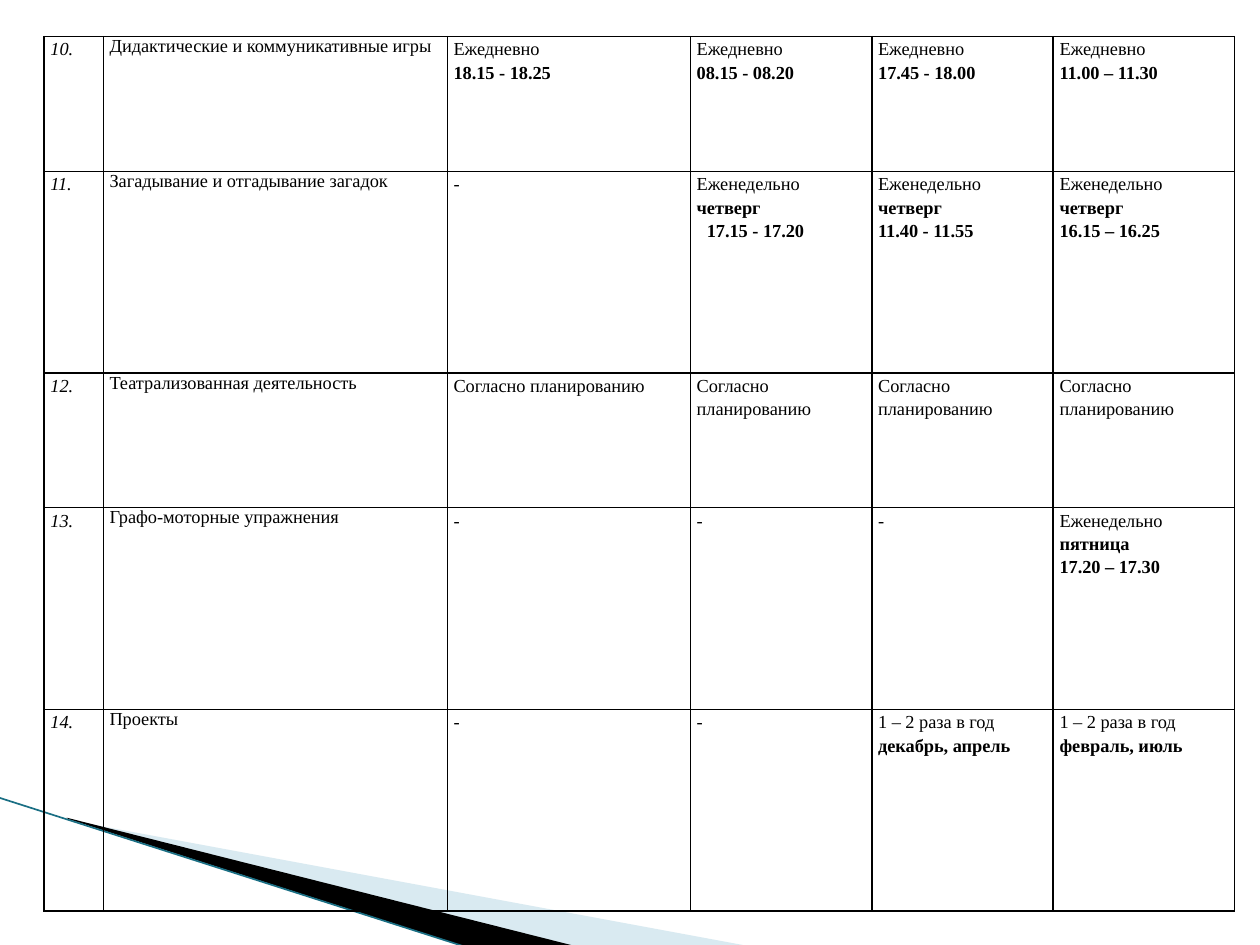
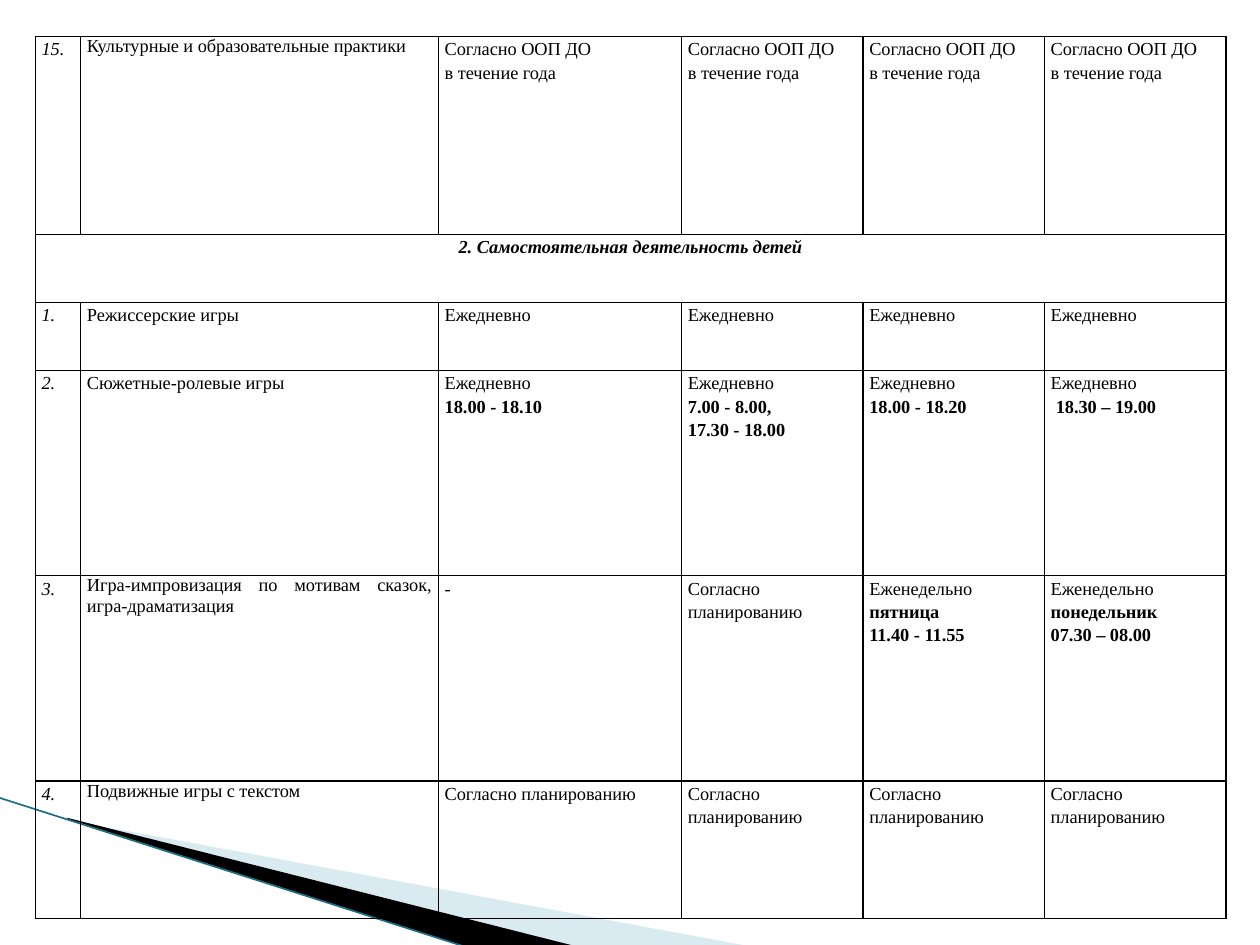
import dataclasses

import lxml.etree
import pptx
import pptx.dml.color
import pptx.enum.shapes
import pptx.enum.text
import pptx.oxml.ns
import pptx.util

Inches = pptx.util.Inches
Pt = pptx.util.Pt
qn = pptx.oxml.ns.qn
Align = pptx.enum.text.PP_ALIGN


@dataclasses.dataclass(frozen=True)
class Theme:
    ink: str = "000000"
    pale: str = "A0CBDC"
    edge: str = "1A6F84"
    pale_alpha: int = 40
    font: str = "Times New Roman"
    size: float = 10.5
    border: float = 1
    edge_width: float = 0.95
    loose: float = 1.15
    tight: float = 0.99
    indent: float = 0.04


def rgb(value):
    return pptx.dml.color.RGBColor.from_string(value)


def apply(target, values):
    for name, value in values.items():
        setattr(target, name, value)


class Deck:
    def __init__(self, theme):
        self.theme = theme
        self.presentation = pptx.Presentation()
        apply(self.presentation, {"slide_width": Inches(10), "slide_height": Inches(7.5)})
        self.slide = None

    def new_slide(self):
        self.slide = self.presentation.slides.add_slide(self.presentation.slide_layouts[6])
        self.wedge([(0.55, 6.51), (5.95, 7.51), (4.56, 7.51), (0.55, 6.5)],
                   self.theme.pale, self.theme.pale_alpha)
        self.wedge([(0.53, 6.49), (4.57, 7.51), (3.72, 7.52), (0.54, 6.5)], self.theme.ink)
        self.line((-0.01, 6.33), (3.71, 7.52))

    def wedge(self, points, color, alpha=100):
        start, *rest = [(Inches(x), Inches(y)) for x, y in points]
        builder = self.slide.shapes.build_freeform(*start)
        builder.add_line_segments(rest)
        wedge = builder.convert_to_shape()
        wedge.shadow.inherit = False
        wedge.line.fill.background()
        wedge.fill.solid()
        wedge.fill.fore_color.rgb = rgb(color)
        if alpha < 100:
            tint = wedge.element.spPr.find(".//" + qn("a:srgbClr"))
            lxml.etree.SubElement(tint, qn("a:alpha"), val=str(alpha * 1000))

    def line(self, start, end):
        edge = self.slide.shapes.add_connector(
            pptx.enum.shapes.MSO_CONNECTOR.STRAIGHT, *map(Inches, start + end))
        edge.line.color.rgb = rgb(self.theme.edge)
        edge.line.width = Pt(self.theme.edge_width)
        lxml.etree.SubElement(edge.element.spPr, qn("a:effectLst"))

    def schedule(self, left, top, widths, heights, rows, loose_names=()):
        frame = self.slide.shapes.add_table(
            len(rows), len(widths), Inches(left), Inches(top),
            Inches(sum(widths)), Inches(sum(heights)))
        table = frame.table
        apply(table, {"first_row": False, "horz_banding": False})
        for column, width in zip(table.columns, widths):
            column.width = Inches(width)
        for row, height in zip(table.rows, heights):
            row.height = Inches(height)
        for r, texts in enumerate(rows):
            for c in range(len(widths)):
                self.frame_cell(table.cell(r, c))
            if len(texts) == 1:
                table.cell(r, 0).merge(table.cell(r, len(widths) - 1))
                self.cell_text(table.cell(r, 0), "*" + texts[0], italic=True, align=Align.CENTER)
                continue
            for c, text in enumerate(texts):
                tight = c == 1 and r not in loose_names
                self.cell_text(table.cell(r, c), text, italic=c == 0,
                               spacing=self.theme.tight if tight else self.theme.loose)

    def frame_cell(self, cell):
        apply(cell, {"margin_left": Inches(0.05), "margin_right": Inches(0.05),
                     "margin_top": 0, "margin_bottom": 0})
        properties = cell._tc.get_or_add_tcPr()
        for side in ("lnL", "lnR", "lnT", "lnB"):
            border = lxml.etree.SubElement(properties, qn("a:" + side), w=str(Pt(self.theme.border)))
            fill = lxml.etree.SubElement(border, qn("a:solidFill"))
            lxml.etree.SubElement(fill, qn("a:srgbClr"), val=self.theme.ink)
        cell.fill.background()

    def cell_text(self, cell, text, italic=False, align=Align.JUSTIFY, spacing=None):
        for number, line in enumerate(text.split("|")):
            frame = cell.text_frame
            paragraph = frame.add_paragraph() if number else frame.paragraphs[0]
            words = line.lstrip(">")
            steps = len(line) - len(words)
            if steps:
                paragraph._p.get_or_add_pPr().set("marL", str(Inches(steps * self.theme.indent)))
            apply(paragraph, {"alignment": align, "line_spacing": spacing or self.theme.loose})
            run = paragraph.add_run()
            run.text = words.lstrip("*")
            apply(run.font, {"name": self.theme.font, "size": Pt(self.theme.size),
                             "bold": words.startswith("*"), "italic": italic})
            run.font.color.rgb = rgb(self.theme.ink)


DAILY = "Ежедневно"
WEEKLY = "Еженедельно"
PLANNED = "Согласно планированию"
PROGRAMME = "Согласно ООП ДО|в течение года"
YEARLY = "1 – 2 раза в год"
GROUP_WIDTHS = [1.93, 1.44, 1.44, 1.44]

JOINT_ACTIVITIES = [
    ["10.", "Дидактические и коммуникативные игры", f"{DAILY}|*18.15 - 18.25",
     f"{DAILY}|*08.15 - 08.20", f"{DAILY}|*17.45 - 18.00", f"{DAILY}|*11.00 – 11.30"],
    ["11.", "Загадывание и отгадывание загадок", "-", f"{WEEKLY}|*четверг|>>*17.15 - 17.20",
     f"{WEEKLY}|*четверг|*11.40 - 11.55", f"{WEEKLY}|*четверг|*16.15 – 16.25"],
    ["12.", "Театрализованная деятельность"] + [PLANNED] * 4,
    ["13.", "Графо-моторные упражнения", "-", "-", "-", f"{WEEKLY}|*пятница|*17.20 – 17.30"],
    ["14.", "Проекты", "-", "-", f"{YEARLY}|*декабрь, апрель", f"{YEARLY}|*февраль, июль"],
]

INDEPENDENT_ACTIVITIES = [
    ["15.", "Культурные и образовательные практики"] + [PROGRAMME] * 4,
    ["2. Самостоятельная деятельность детей"],
    ["1.", "Режиссерские игры"] + [DAILY] * 4,
    ["2.", "Сюжетные-ролевые игры", f"{DAILY}|*18.00 - 18.10",
     f"{DAILY}|*7.00 - 8.00,|*17.30 - 18.00", f"{DAILY}|*18.00 - 18.20",
     f"{DAILY}|>*18.30 – 19.00"],
    ["3.", "Игра-импровизация по мотивам сказок, игра-драматизация", "-", PLANNED,
     f"{WEEKLY}|*пятница|*11.40 - 11.55", f"{WEEKLY}|*понедельник|*07.30 – 08.00"],
    ["4.", "Подвижные игры с текстом"] + [PLANNED] * 4,
]


def main():
    deck = Deck(Theme())
    deck.new_slide()
    deck.schedule(0.35, 0.29, [0.47, 2.73] + GROUP_WIDTHS,
                  [1.07, 1.6, 1.07, 1.6, 1.6], JOINT_ACTIVITIES)
    deck.new_slide()
    deck.schedule(0.28, 0.29, [0.36, 2.84] + GROUP_WIDTHS,
                  [1.57, 0.54, 0.54, 1.63, 1.63, 1.09], INDEPENDENT_ACTIVITIES,
                  loose_names=(2, 3))
    deck.presentation.save("out.pptx")


if __name__ == "__main__":
    main()
